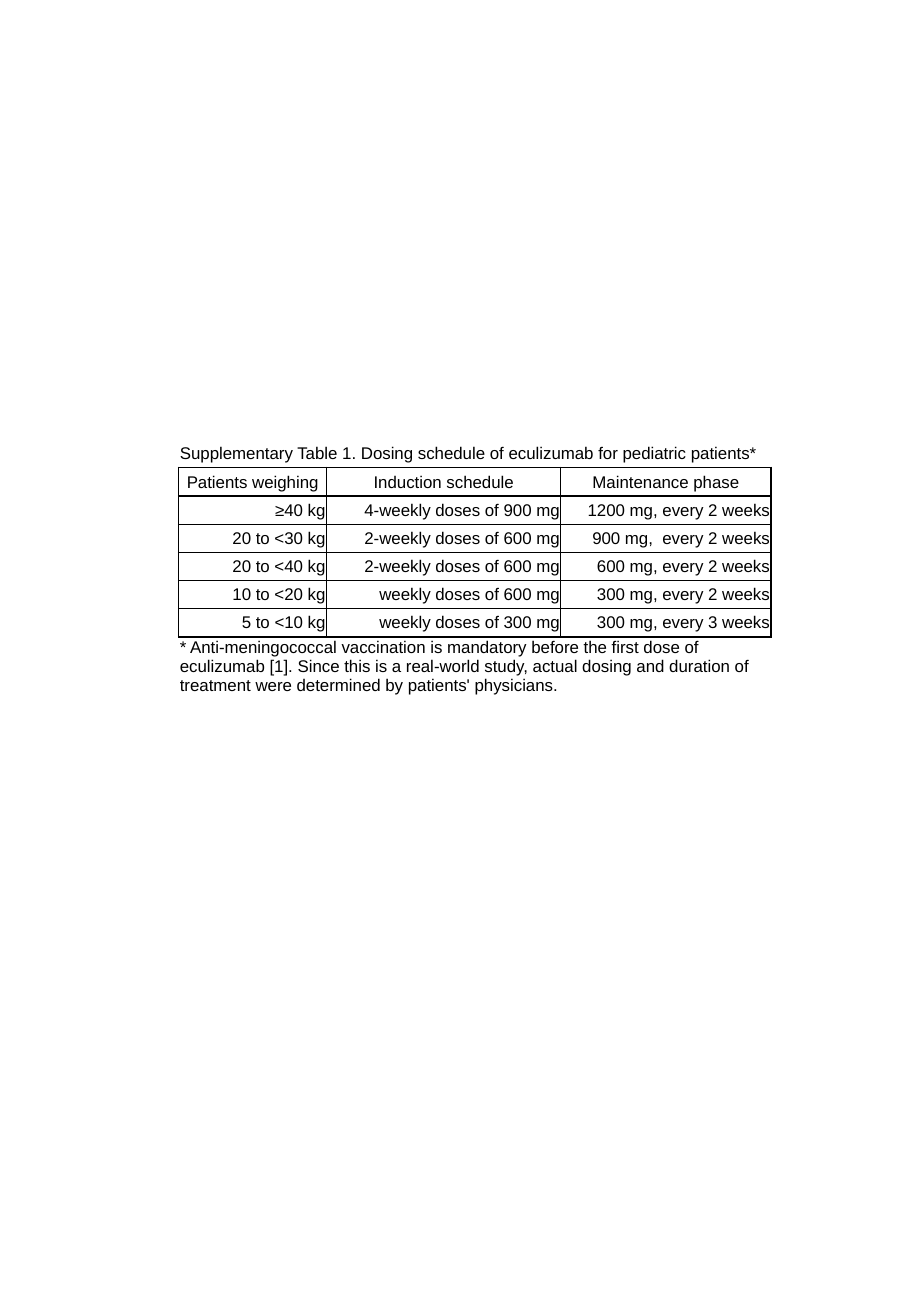
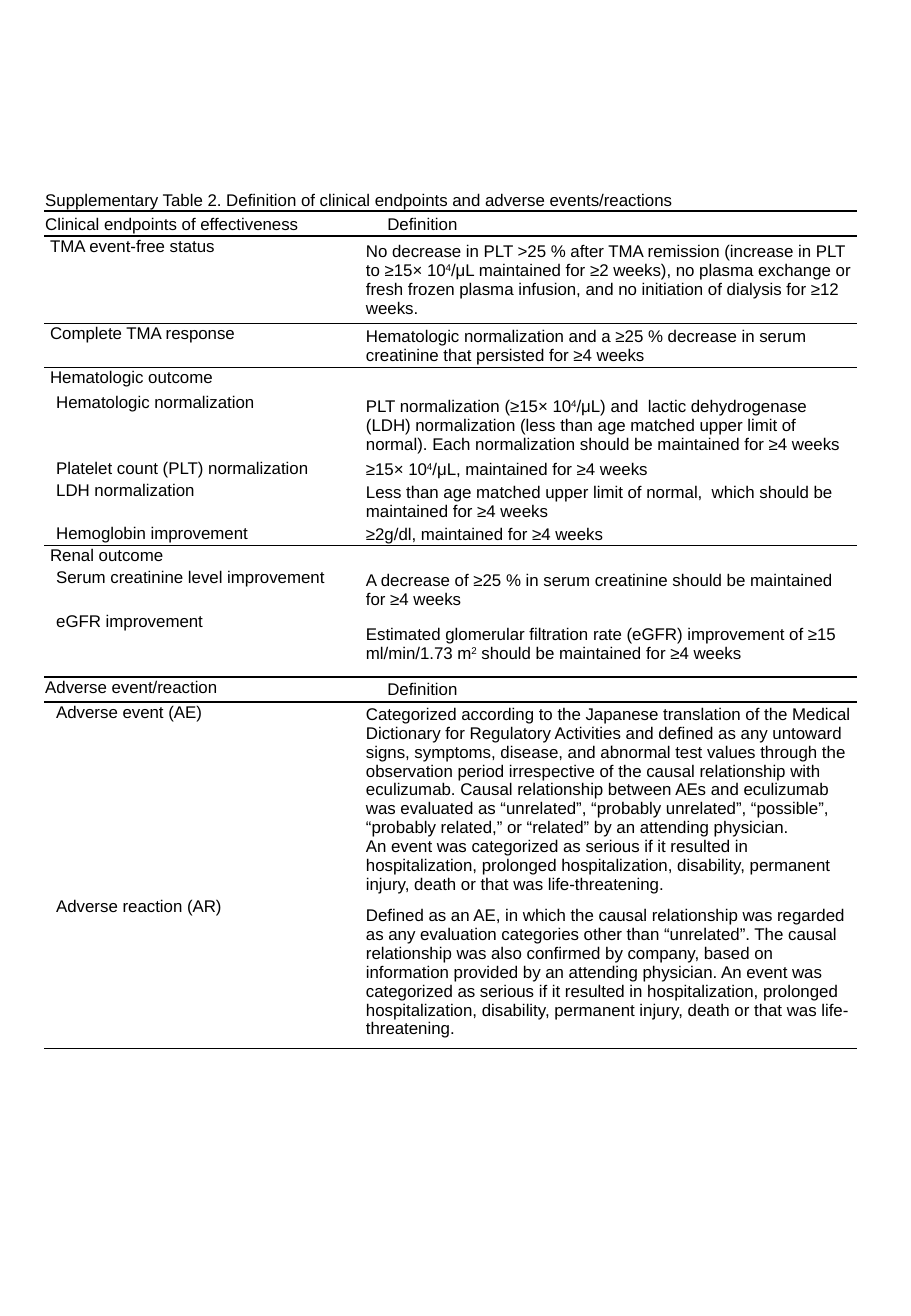
from lxml.etree import SubElement
from pptx import Presentation
from pptx.dml.color import RGBColor
from pptx.enum.text import MSO_ANCHOR, PP_ALIGN
from pptx.oxml.ns import qn
from pptx.util import Pt

BLACK = RGBColor(0, 0, 0)
WHITE = RGBColor(255, 255, 255)
LEFT, MID, RIGHT = PP_ALIGN.LEFT, PP_ALIGN.CENTER, PP_ALIGN.RIGHT
PAD = 0.72
HEAD, GROUP, ITEM, SHIFT = PAD, 3.6, 7.2, 13.4
THIN, FIRM, THICK = 0.5, 1, 1.5

DOSES = [
    ("Supplementary Table 1. Dosing schedule of eculizumab for pediatric patients*", "", ""),
    ("Patients weighing", "Induction schedule", "Maintenance phase"),
    ("≥40 kg", "4-weekly doses of 900 mg", "1200 mg, every 2 weeks"),
    ("20 to <30 kg", "2-weekly doses of 600 mg", "900 mg,  every 2 weeks"),
    ("20 to <40 kg", "2-weekly doses of 600 mg", "600 mg, every 2 weeks"),
    ("10 to <20 kg", "weekly doses of 600 mg", "300 mg, every 2 weeks"),
    ("5 to <10 kg", "weekly doses of 300 mg", "300 mg, every 3 weeks"),
    ("* Anti-meningococcal vaccination is mandatory before the first dose of "
     "eculizumab [1]. Since this is a real-world study, actual dosing and duration of "
     "treatment were determined by patients' physicians.", "", ""),
]

TERMS = [
    (13, 0, HEAD, "Supplementary Table 2. Definition of clinical endpoints and "
     "adverse events/reactions", ""),
    (14.8, THICK, HEAD, "Clinical endpoints of effectiveness", "Definition"),
    (51.4, THICK, GROUP, "TMA event-free status",
     "No decrease in PLT >25 % after TMA remission (increase in PLT to ≥15× 10^4^/μL "
     "maintained for ≥2 weeks), no plasma exchange or fresh frozen plasma infusion, "
     "and no initiation of dialysis for ≥12 weeks."),
    (26.3, THIN, GROUP, "Complete TMA response",
     "Hematologic normalization and a ≥25 % decrease in serum creatinine that "
     "persisted for ≥4 weeks"),
    (14.8, THIN, GROUP, "Hematologic outcome", ""),
    (38.8, 0, ITEM, "Hematologic normalization",
     "PLT normalization (≥15× 10^4^/μL) and  lactic dehydrogenase (LDH) normalization "
     "(less than age matched upper limit of normal). Each normalization should be "
     "maintained for ≥4 weeks"),
    (13, 0, ITEM, "Platelet count (PLT) normalization",
     "≥15× 10^4^/μL, maintained for ≥4 weeks"),
    (26, 0, ITEM, "LDH normalization",
     "Less than age matched upper limit of normal,  which should be maintained "
     "for ≥4 weeks"),
    (13, 0, ITEM, "Hemoglobin improvement", "≥2g/dl, maintained for ≥4 weeks"),
    (13, THIN, GROUP, "Renal outcome", ""),
    (26, 0, ITEM, "Serum creatinine level improvement",
     "A decrease of ≥25 % in serum creatinine should be maintained for ≥4 weeks"),
    (38.9, 0, ITEM, "eGFR improvement",
     "Estimated glomerular filtration rate (eGFR) improvement of ≥15 ml/min/1.73 m^2^ "
     "should be maintained for ≥4 weeks"),
    (14.8, THICK, HEAD, "Adverse event/reaction", "Definition"),
    (115.2, THICK, ITEM, "Adverse event (AE)",
     "Categorized according to the Japanese translation of the Medical Dictionary for "
     "Regulatory Activities and defined as any untoward signs, symptoms, disease, and "
     "abnormal test values through the observation period irrespective of the causal "
     "relationship with eculizumab. Causal relationship between AEs and eculizumab was "
     "evaluated as “unrelated”, “probably unrelated”, “possible”, “probably related,” "
     "or “related” by an attending physician.\n"
     "An event was categorized as serious if it resulted in hospitalization, prolonged "
     "hospitalization, disability, permanent injury, death or that was "
     "life-threatening."),
    (90, 0, ITEM, "Adverse reaction (AR)",
     "Defined as an AE, in which the causal relationship was regarded as any evaluation "
     "categories other than “unrelated”. The causal relationship was also confirmed by "
     "company, based on information provided by an attending physician. An event was "
     "categorized as serious if it resulted in hospitalization, prolonged "
     "hospitalization, disability, permanent injury, death or that was "
     "life-threatening."),
]


def write(frame, text, size=10, font="Arial", color=BLACK, align=LEFT):
    for row, line in enumerate(text.split("\n")):
        para = frame.add_paragraph() if row else frame.paragraphs[0]
        para.alignment = align
        if not line:
            SubElement(para._p, qn("a:endParaRPr"), sz=str(size * 100))
            continue
        for part, words in enumerate(line.split("^")):
            run = para.add_run()
            run.text = words
            run.font.size = Pt(size)
            run.font.name = font
            run.font.color.rgb = color
            if part % 2:
                run._r.get_or_add_rPr().set("baseline", "30000")


class Deck:
    def __init__(self, wide, high):
        self.file = Presentation()
        self.file.slide_width = Pt(wide)
        self.file.slide_height = Pt(high)
        self.slide = None

    def page(self):
        self.slide = self.file.slides.add_slide(self.file.slide_layouts[6])
        self.slide.background.fill.solid()
        self.slide.background.fill.fore_color.rgb = WHITE

    def table(self, left, top, cols, rows):
        shape = self.slide.shapes.add_table(
            len(rows), len(cols), Pt(left), Pt(top), Pt(sum(cols)), Pt(sum(rows)))
        grid = shape.table
        grid.first_row = grid.horz_banding = False
        for col, wide in zip(grid.columns, cols):
            col.width = Pt(wide)
        for row, high in zip(grid.rows, rows):
            row.height = Pt(high)
        return grid

    def span(self, grid, row):
        grid.cell(row, 0).merge(grid.cell(row, len(grid.columns) - 1))

    def cell(self, cell, text, edges, left=PAD, anchor=MSO_ANCHOR.MIDDLE, **style):
        cell.margin_left = Pt(left)
        cell.margin_right = cell.margin_top = Pt(PAD)
        cell.margin_bottom = 0
        cell.vertical_anchor = anchor
        for side, width in zip("LRTB", edges):
            self.edge(cell, side, width)
        cell.fill.background()
        write(cell.text_frame, text, **style)

    def edge(self, cell, side, width):
        line = SubElement(cell._tc.get_or_add_tcPr(), qn("a:ln" + side), w=str(Pt(width)))
        if width:
            fill = SubElement(line, qn("a:solidFill"))
            SubElement(fill, qn("a:srgbClr"), val=str(BLACK))
        else:
            SubElement(line, qn("a:noFill"))

    def save(self):
        self.file.save("out.pptx")


def doses(deck):
    deck.page()
    last = len(DOSES) - 1
    grid = deck.table(105.9, 260, [87.7, 138.8, 124.6],
                      [17, 17.1, 16.6, 16.6, 16.6, 16.6, 17.1, 34.5])
    across = [0, FIRM, FIRM] + [THIN] * 4 + [FIRM, 0]
    down = [FIRM, THIN, THIN, FIRM]
    for row, texts in enumerate(DOSES):
        wide = row in (0, last)
        if wide:
            deck.span(grid, row)
        align = LEFT if wide else MID if row == 1 else RIGHT
        for col, text in enumerate(texts):
            sides = (0, 0) if wide else (down[col], down[col + 1])
            deck.cell(grid.cell(row, col), text,
                      (*sides, across[row], across[row + 1]), align=align)


def terms(deck):
    deck.page()
    grid = deck.table(26.1, 112.3, [190.1, 291.7], [term[0] for term in TERMS])
    across = [term[1] for term in TERMS] + [THIN]
    deck.span(grid, 0)
    for row, (high, rule, left, name, sense) in enumerate(TERMS):
        edges = (0, 0, rule, across[row + 1])
        anchor = MSO_ANCHOR.MIDDLE if row < 2 else MSO_ANCHOR.TOP
        deck.cell(grid.cell(row, 0), name, edges, left=left, anchor=anchor)
        deck.cell(grid.cell(row, 1), sense, edges,
                  left=SHIFT if left == HEAD else PAD)


def main():
    deck = Deck(540, 780)
    doses(deck)
    terms(deck)
    deck.save()


if __name__ == "__main__":
    main()
